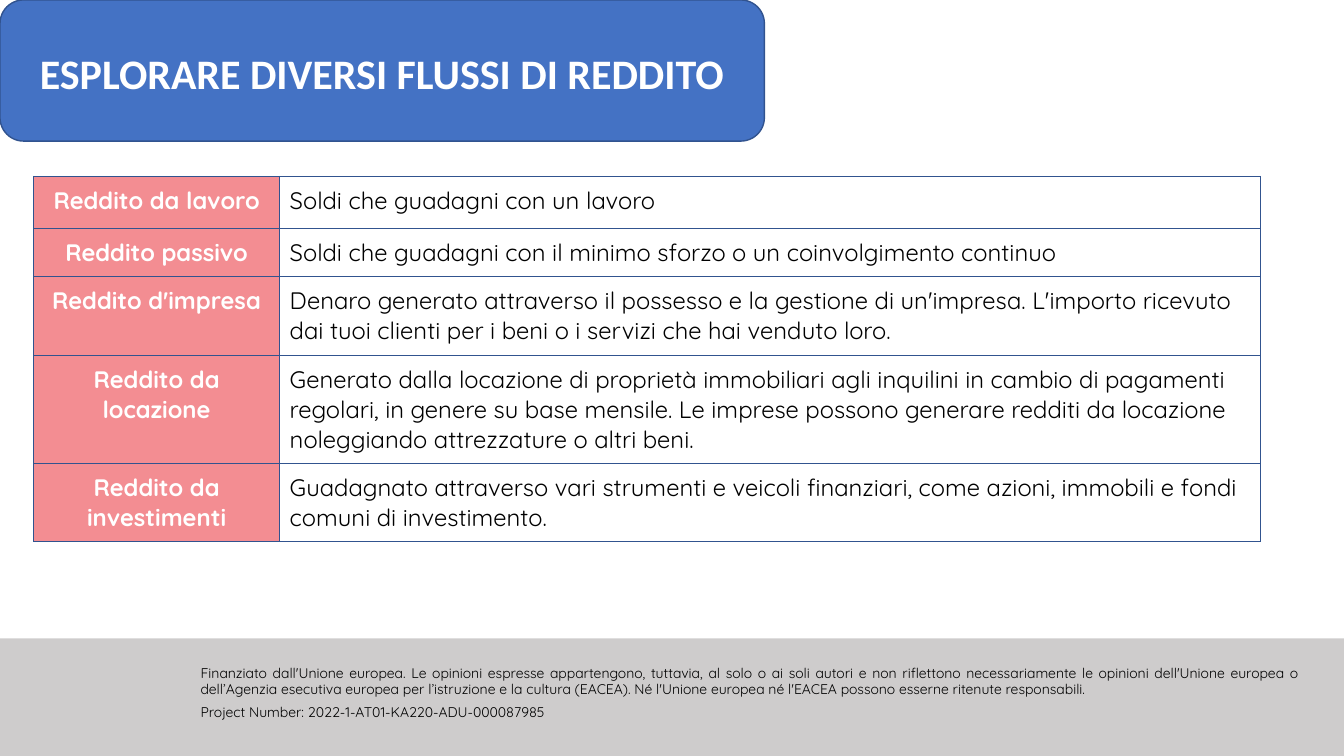
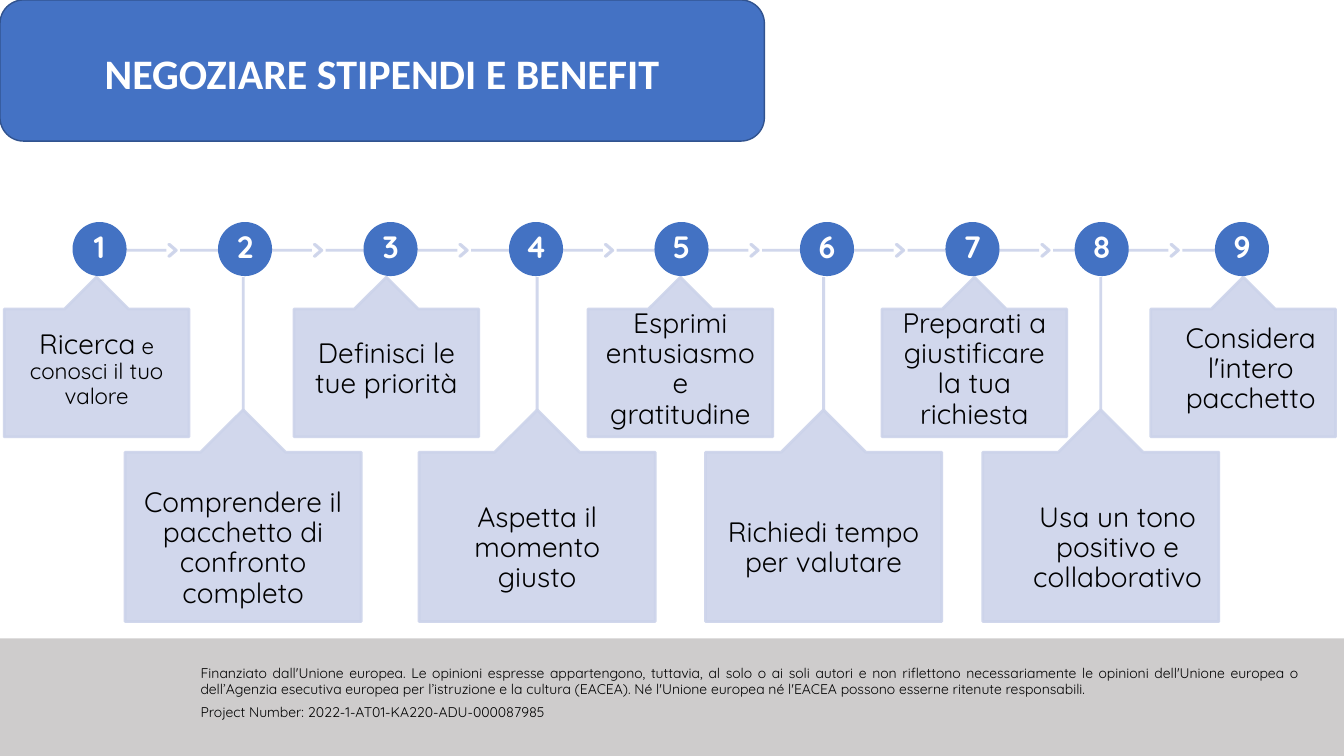
from lxml.etree import SubElement
from pptx import Presentation
from pptx.dml.color import RGBColor
from pptx.enum.shapes import MSO_CONNECTOR, MSO_SHAPE
from pptx.enum.text import MSO_ANCHOR, MSO_AUTO_SIZE, PP_ALIGN
from pptx.oxml import parse_xml
from pptx.oxml.ns import nsdecls, qn
from pptx.util import Inches, Pt

COLUMNS, ROWS = 160, 90
SLIDE_WIDTH, SLIDE_HEIGHT = Inches(13.33), Inches(7.5)
BLUE, DARK_BLUE, CIRCLE_BLUE, PALE_BLUE = "4472C4", "31538F", "4372C3", "CCD3EA"
PINK, GRAY, WHITE, BLACK = "F38D92", "AEABAB", "FFFFFF", "000000"
BODY_FONT = "Quicksand"
TITLE_FORMAT = {"name": "Calibri", "size": Pt(30), "bold": True}
NUMBER_FORMAT = {"name": BODY_FONT, "size": Pt(22), "bold": True}
CENTERED = {"alignment": PP_ALIGN.CENTER, "line_spacing": 0.9}
JUSTIFIED = {"alignment": PP_ALIGN.JUSTIFY, "line_spacing": 0.9, "space_after": Pt(6)}

FOOTER_LINES = [
    "Finanziato dall'Unione europea. Le opinioni espresse appartengono, tuttavia, al solo o ai soli "
    "autori e non riflettono necessariamente le opinioni dell'Unione europea o dell’Agenzia esecutiva "
    "europea per l’istruzione e la cultura (EACEA). Né l'Unione europea né l'EACEA possono esserne "
    "ritenute responsabili.",
    "Project Number: 2022-1-AT01-KA220-ADU-000087985",
]

INCOME_ROWS = [
    (6.2, "Reddito da lavoro", "Soldi che guadagni con un lavoro"),
    (5.7, "Reddito passivo", "Soldi che guadagni con il minimo sforzo o un coinvolgimento continuo"),
    (9.3, "Reddito d'impresa",
     "Denaro generato attraverso il possesso e la gestione di un'impresa. L'importo ricevuto dai tuoi "
     "clienti per i beni o i servizi che hai venduto loro."),
    (12.5, "Reddito da locazione",
     "Generato dalla locazione di proprietà immobiliari agli inquilini in cambio di pagamenti regolari, "
     "in genere su base mensile. Le imprese possono generare redditi da locazione noleggiando "
     "attrezzature o altri beni."),
    (9.3, "Reddito da investimenti",
     "Guadagnato attraverso vari strumenti e veicoli finanziari, come azioni, immobili e fondi comuni "
     "di investimento."),
]

CIRCLE_LEFTS = [round(8.8 + 17.32 * index, 2) for index in range(7)] + [128.1, 144.8]
CIRCLE_TOP, CIRCLE_SIZE = 26.6, 6.1
AXIS_ROW = 29.8
CHEVRON_OFFSET, CHEVRON_WIDTH, CHEVRON_HEIGHT = 11.3, 0.9, 1.4

SMALL_CALLOUT = {"top": 33, "width": 22, "height": 19, "margin": 1.8, "insets": (0, 0.8)}
TALL_CALLOUT = {"top": 48.8, "width": 28.1, "height": 25.2, "margin": 2.2, "insets": (2.8, 0)}
STEPS = [
    (0.5, 0, [("Ricerca", 20), (" e conosci il tuo valore", 16)]),
    (14.9, 0, [("Comprendere il pacchetto di confronto completo", 20)]),
    (35, 0, [("Definisci le tue priorità", 20)]),
    (49.9, 0, [("Aspetta il momento giusto", 20)]),
    (70, 0, [("Esprimi entusiasmo e gratitudine", 20)]),
    (84, 0, [("Richiedi tempo per valutare", 20)]),
    (105, 0, [("Preparati a giustificare la tua richiesta", 20)]),
    (117, 2, [("Usa un tono positivo e collaborativo", 20)]),
    (137, 0.9, [("Considera l'intero pacchetto", 20)]),
]


def across(columns):
    return round(SLIDE_WIDTH * columns / COLUMNS)


def down(rows):
    return round(SLIDE_HEIGHT * rows / ROWS)


def area(left, top, width, height):
    return across(left), down(top), across(width), down(height)


def color(value):
    return RGBColor.from_string(value)


def assign(target, values):
    for name, value in values.items():
        setattr(target, name, value)


def set_opacity(element, percent):
    for swatch in element.iter(qn("a:srgbClr")):
        SubElement(swatch, qn("a:alpha"), val=str(percent * 1000))


def set_insets(frame, left, top, right, bottom):
    assign(frame, {"margin_left": across(left), "margin_top": down(top),
                   "margin_right": across(right), "margin_bottom": down(bottom)})


def add_run(paragraph, text, font_color, font_format):
    run = paragraph.add_run()
    run.text = text
    assign(run.font, font_format)
    run.font.color.rgb = color(font_color)


def add_box(slide, preset, box, fill, line=None, line_width=2, opacity=100):
    shape = slide.shapes.add_shape(preset, *area(*box))
    shape.shadow.inherit = False
    shape.fill.solid()
    shape.fill.fore_color.rgb = color(fill)
    if line:
        shape.line.color.rgb = color(line)
        shape.line.width = Pt(line_width)
    else:
        shape.line.fill.background()
    if opacity < 100:
        set_opacity(shape.element.spPr, opacity)
    assign(shape.text_frame, {"word_wrap": True, "vertical_anchor": MSO_ANCHOR.MIDDLE})
    return shape


def add_line(slide, start, end):
    points = across(start[0]), down(start[1]), across(end[0]), down(end[1])
    connector = slide.shapes.add_connector(MSO_CONNECTOR.STRAIGHT, *points)
    connector.line.color.rgb = color(PALE_BLUE)
    connector.line.width = Pt(2)
    properties = connector.element.spPr
    set_opacity(properties, 90)
    SubElement(properties, qn("a:effectLst"))


def add_footer_text(slide):
    text_box = slide.shapes.add_textbox(*area(22.7, 78.8, 133, 9.8))
    frame = text_box.text_frame
    frame.word_wrap = True
    for index, text in enumerate(FOOTER_LINES):
        paragraph = frame.add_paragraph() if index else frame.paragraphs[0]
        assign(paragraph, JUSTIFIED)
        add_run(paragraph, text, BLACK, {"name": BODY_FONT, "size": Pt(10)})
    return text_box


def furnish_layout(layout, slide):
    for placeholder in list(layout.placeholders):
        if placeholder.placeholder_format.idx:
            layout.shapes.element.remove(placeholder.element)
        else:
            left, top, width, height = area(3, 5, 85, 7.3)
            assign(placeholder, {"left": left, "top": top, "width": width, "height": height})
    shared = [
        add_box(slide, MSO_SHAPE.RECTANGLE, (0, 76, COLUMNS, 14), GRAY, opacity=60),
        add_footer_text(slide),
        add_box(slide, MSO_SHAPE.ROUNDED_RECTANGLE, (0, 0, 91, 16.8), BLUE, DARK_BLUE, 1),
    ]
    for shape in shared:
        layout.shapes.element.append(shape.element)


def set_title(slide, text):
    frame = slide.shapes.title.text_frame
    assign(frame, {"word_wrap": True, "auto_size": MSO_AUTO_SIZE.NONE,
                   "vertical_anchor": MSO_ANCHOR.MIDDLE})
    frame.paragraphs[0].alignment = PP_ALIGN.CENTER
    add_run(frame.paragraphs[0], text, WHITE, TITLE_FORMAT)


def set_borders(cell):
    properties = cell._tc.get_or_add_tcPr()
    for index, side in enumerate(("lnL", "lnR", "lnT", "lnB")):
        properties.insert(index, parse_xml(
            f'<a:{side} {nsdecls("a")} w="{Pt(0.75)}"><a:solidFill>'
            f'<a:srgbClr val="{DARK_BLUE}"/></a:solidFill></a:{side}>'))


def fill_cell(cell, text, heading):
    set_insets(cell, 1.2, 1.1, 1.2, 1.1)
    cell.fill.solid()
    cell.fill.fore_color.rgb = color(PINK if heading else WHITE)
    set_borders(cell)
    paragraph = cell.text_frame.paragraphs[0]
    paragraph.alignment = PP_ALIGN.CENTER if heading else PP_ALIGN.LEFT
    add_run(paragraph, text, WHITE if heading else BLACK,
            {"name": BODY_FONT, "size": Pt(17), "bold": heading})


def add_income_table(slide):
    height = sum(row[0] for row in INCOME_ROWS)
    table = slide.shapes.add_table(len(INCOME_ROWS), 2, *area(4, 21, 146, height)).table
    assign(table, {"first_row": False, "horz_banding": False})
    for column, width in zip(table.columns, (29.3, 116.7)):
        column.width = across(width)
    for index, (row_height, *texts) in enumerate(INCOME_ROWS):
        table.rows[index].height = down(row_height)
        for column, text in enumerate(texts):
            fill_cell(table.cell(index, column), text, column == 0)


def add_axis(slide):
    chevrons = [left + CHEVRON_OFFSET for left in CIRCLE_LEFTS[:-1]]
    starts = [12.7] + [left + 1.35 for left in chevrons]
    ends = [left - 0.3 for left in chevrons] + [148.9]
    for start, end in zip(starts, ends):
        add_line(slide, (start, AXIS_ROW), (end, AXIS_ROW))
    for left in chevrons:
        box = (left, AXIS_ROW - CHEVRON_HEIGHT / 2, CHEVRON_WIDTH, CHEVRON_HEIGHT)
        chevron = add_box(slide, MSO_SHAPE.CHEVRON, box, PALE_BLUE, PALE_BLUE, opacity=90)
        chevron.adjustments[0] = 0.9


def add_number(slide, number, left):
    box = (left, CIRCLE_TOP, CIRCLE_SIZE, CIRCLE_SIZE)
    circle = add_box(slide, MSO_SHAPE.OVAL, box, CIRCLE_BLUE, CIRCLE_BLUE)
    set_insets(circle.text_frame, 0.2, 0.2, 0.2, 0.2)
    paragraph = circle.text_frame.paragraphs[0]
    assign(paragraph, CENTERED)
    add_run(paragraph, str(number), WHITE, NUMBER_FORMAT)


def add_callout(slide, left, shift, runs, size):
    box = (left, size["top"], size["width"], size["height"])
    callout = add_box(slide, MSO_SHAPE.UP_ARROW_CALLOUT, box, PALE_BLUE, PALE_BLUE, opacity=90)
    for index, value in enumerate((0.5, 0.2, 0.2, 1)):
        callout.adjustments[index] = value
    top, bottom = size["insets"]
    set_insets(callout.text_frame, size["margin"] + shift, top, size["margin"] - shift, bottom)
    paragraph = callout.text_frame.paragraphs[0]
    assign(paragraph, CENTERED)
    for text, points in runs:
        add_run(paragraph, text, BLACK, {"name": BODY_FONT, "size": Pt(points)})


def add_steps(slide):
    add_axis(slide)
    for index, (left, shift, runs) in enumerate(STEPS):
        size = TALL_CALLOUT if index % 2 else SMALL_CALLOUT
        if size is TALL_CALLOUT:
            center = left + size["width"] / 2
            add_line(slide, (center, SMALL_CALLOUT["top"]), (center, size["top"]))
        add_callout(slide, left, shift, runs, size)
        add_number(slide, index + 1, CIRCLE_LEFTS[index])


def main():
    presentation = Presentation()
    assign(presentation, {"slide_width": SLIDE_WIDTH, "slide_height": SLIDE_HEIGHT})
    layout = presentation.slide_layouts.get_by_name("Title Only")
    income_slide = presentation.slides.add_slide(layout)
    furnish_layout(layout, income_slide)
    set_title(income_slide, "ESPLORARE DIVERSI FLUSSI DI REDDITO")
    add_income_table(income_slide)
    negotiation_slide = presentation.slides.add_slide(layout)
    set_title(negotiation_slide, "NEGOZIARE STIPENDI E BENEFIT")
    add_steps(negotiation_slide)
    presentation.save("out.pptx")


if __name__ == "__main__":
    main()
